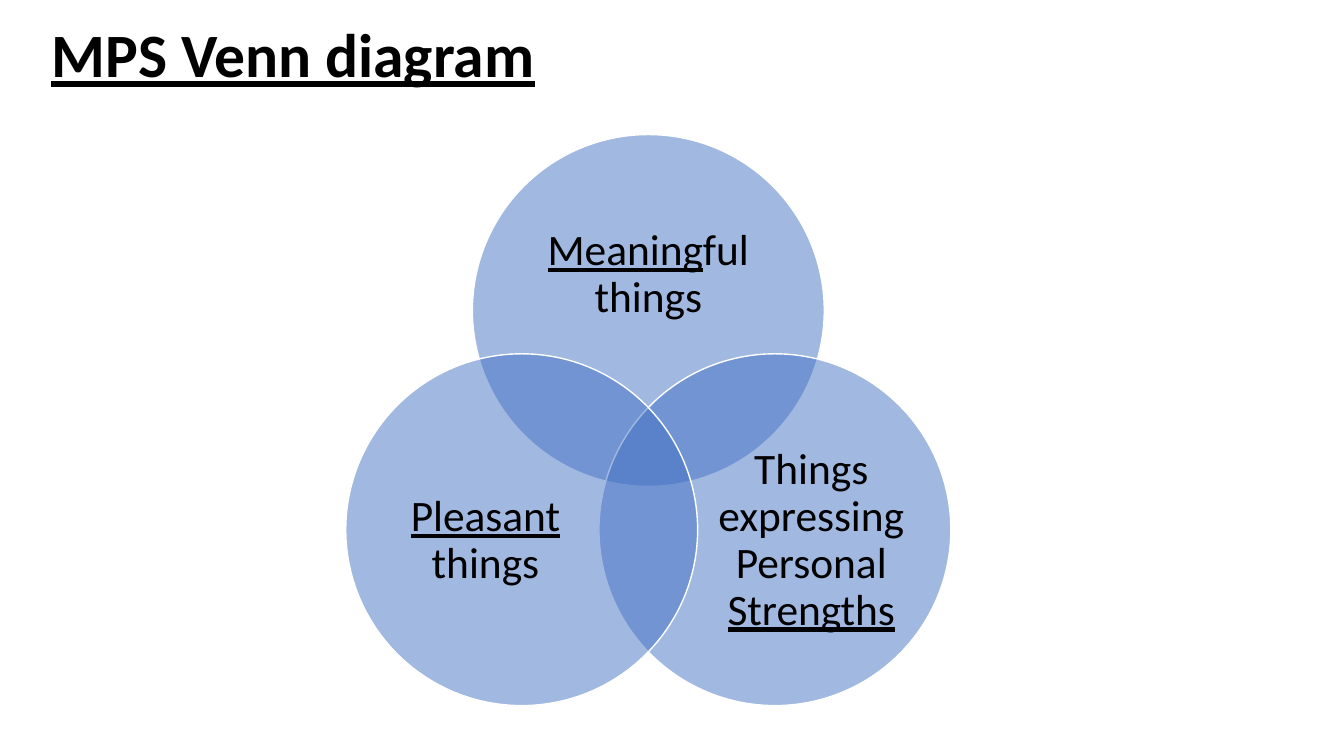
from math import cos, radians, sin

from lxml import etree
from pptx import Presentation
from pptx import util as u
from pptx.dml.color import RGBColor
from pptx.enum import shapes, text
from pptx.oxml.ns import qn

# Content: angle around the centre, label offset and size, runs (words, underlined)
TITLE = "MPS Venn diagram"
CIRCLES = [
    (-90, (0, -35), (256, 157), [("Meaning", True), ("ful things", False)]),
    (30, (36, 11), (209, 192),
     [("Things expressing Personal ", False), ("Strengths", True)]),
    (150, (-36, 11), (209, 192), [("Pleasant", True), (" things", False)]),
]

# Look and layout, in px at 100 to the inch
PX = 9144
FONT = "Calibri"
BLACK = RGBColor(0x00, 0x00, 0x00)
WHITE = RGBColor(0xFF, 0xFF, 0xFF)
BLUE = RGBColor(0x44, 0x72, 0xC4)
CENTRE_X, CENTRE_Y = 643, 453
ORBIT = 145
DIAMETER = 349


def box(x, y, width, height):
    return [u.Emu(round(length * PX)) for length in (x, y, width, height)]


def centred(x, y, width, height):
    return box(x - width / 2, y - height / 2, width, height)


def write(frame, runs, size, align, bold=False):
    frame.word_wrap = True
    frame.vertical_anchor = text.MSO_ANCHOR.MIDDLE
    paragraph = frame.paragraphs[0]
    paragraph.alignment = align
    paragraph.line_spacing = 0.9
    for words, underlined in runs:
        run = paragraph.add_run()
        run.text = words
        run.font.name = FONT
        run.font.size = u.Pt(size)
        run.font.bold = bold
        run.font.underline = underlined
        run.font.color.rgb = BLACK


deck = Presentation()
deck.slide_width, deck.slide_height = box(0, 0, 1333, 750)[2:]
slide = deck.slides.add_slide(deck.slide_layouts[5])

# Title
title = slide.shapes.title
title.left, title.top, title.width, title.height = box(41, 15, 1201, 85)
write(title.text_frame, [(TITLE, True)], 44, text.PP_ALIGN.LEFT, bold=True)

# Overlapping circles, each with its label
for angle, (dx, dy), label_size, runs in CIRCLES:
    x = CENTRE_X + ORBIT * cos(radians(angle))
    y = CENTRE_Y + ORBIT * sin(radians(angle))
    circle = slide.shapes.add_shape(
        shapes.MSO_SHAPE.OVAL, *centred(x, y, DIAMETER, DIAMETER))
    circle.shadow.inherit = False
    circle.fill.solid()
    circle.fill.fore_color.rgb = BLUE
    tint = circle.fill._xPr.find(qn("a:solidFill"))[0]
    etree.SubElement(tint, qn("a:alpha"), val="50000")
    circle.line.color.rgb = WHITE
    circle.line.width = u.Pt(1)

    label = slide.shapes.add_textbox(*centred(x + dx, y + dy, *label_size))
    frame = label.text_frame
    frame.margin_left = frame.margin_right = 0
    frame.margin_top = frame.margin_bottom = 0
    write(frame, runs, 31, text.PP_ALIGN.CENTER)

deck.save("out.pptx")
